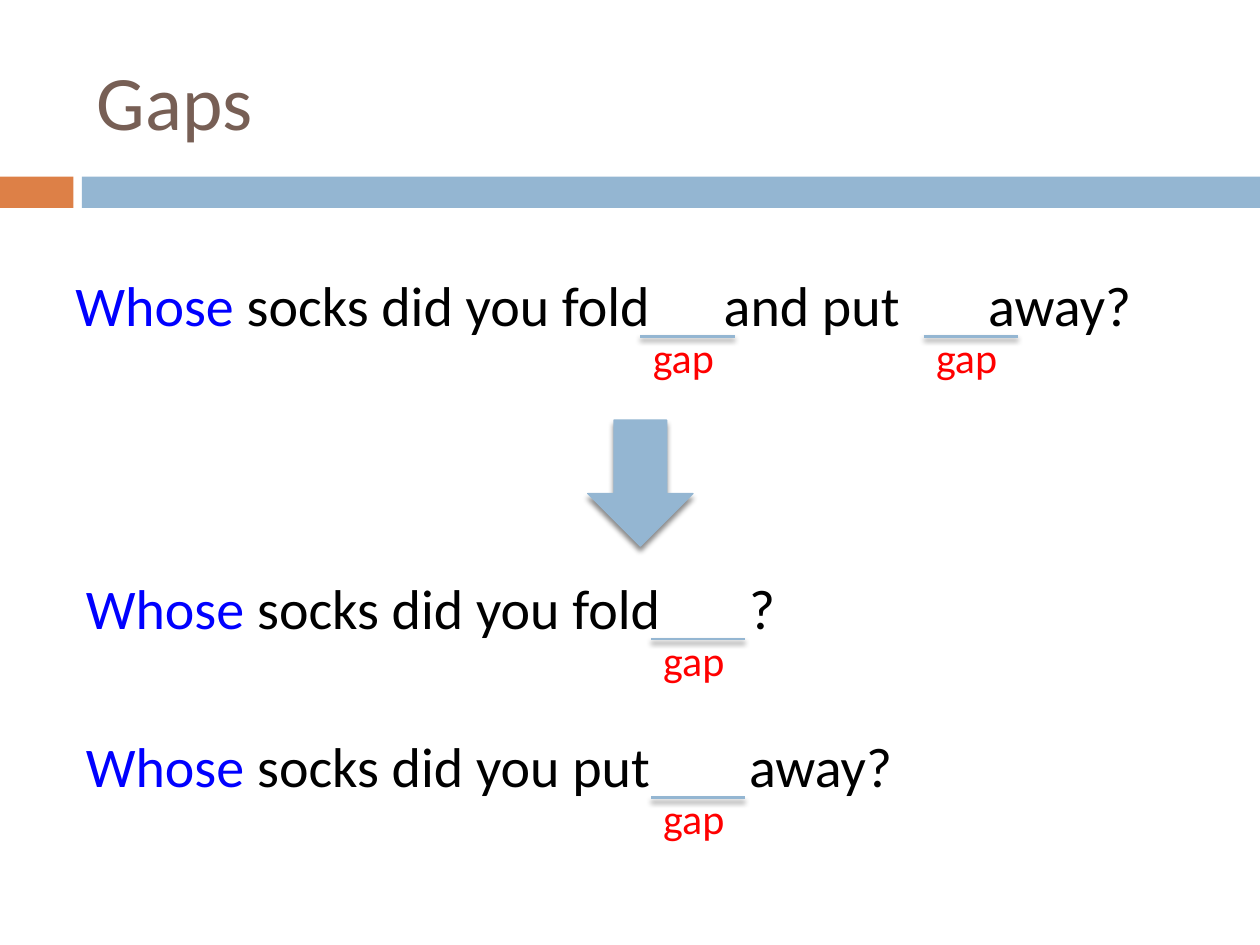
import pptx
import pptx.dml.color
import pptx.enum.shapes
import pptx.enum.text
import pptx.oxml
import pptx.oxml.ns
import pptx.util

Cm = pptx.util.Cm
RGBColor = pptx.dml.color.RGBColor
SHAPES = pptx.enum.shapes.MSO_SHAPE

ORANGE = RGBColor(0xDD, 0x80, 0x47)
SKY = RGBColor(0x94, 0xB6, 0xD2)
BROWN = RGBColor(0x77, 0x5F, 0x55)
BLUE = RGBColor(0x00, 0x00, 0xFF)
RED = RGBColor(0xFF, 0x00, 0x00)
BLACK = RGBColor(0x00, 0x00, 0x00)

FIRST_GAP = 11.64  # distance from a sentence's left edge to its first gap
GAP_WIDTH = 1.9


def add_soft_shadow(item):
    """Give a shape or connector a soft shadow that falls straight down."""
    effects = pptx.oxml.parse_xml(
        f'<a:effectLst {pptx.oxml.ns.nsdecls("a")}>'
        '<a:outerShdw blurRad="38100" dist="30000" dir="5400000" rotWithShape="0">'
        '<a:srgbClr val="000000"><a:alpha val="45000"/></a:srgbClr>'
        '</a:outerShdw></a:effectLst>')
    item._element.spPr.append(effects)


def add_text(page, left, top, width, height, spans, size):
    """Write one paragraph made of (text, colour) spans."""
    box = page.shapes.add_textbox(Cm(left), Cm(top), Cm(width), Cm(height))
    box.text_frame.word_wrap = True
    para = box.text_frame.paragraphs[0]
    for text, colour in spans:
        span = para.add_run()
        span.text = text
        span.font.name = "Calibri"
        span.font.size = pptx.util.Pt(size)
        span.font.color.rgb = colour
    return box


def add_tab_stops(para, stops):
    tabs = "".join(f'<a:tab pos="{Cm(stop)}" algn="l"/>' for stop in stops)
    para._p.get_or_add_pPr().append(pptx.oxml.parse_xml(
        f'<a:tabLst {pptx.oxml.ns.nsdecls("a")}>{tabs}</a:tabLst>'))


def add_block(page, kind, left, top, width, height, colour):
    block = page.shapes.add_shape(kind, Cm(left), Cm(top), Cm(width), Cm(height))
    block.fill.solid()
    block.fill.fore_color.rgb = colour
    block.line.fill.background()
    return block


def add_header(page, left, top, width):
    """Title above a two-coloured band."""
    for offset, band_width, colour in ((0, 1.48, ORANGE), (1.65, width - 1.65, SKY)):
        band = add_block(page, SHAPES.RECTANGLE, left + offset, top + 3.56,
                         band_width, 0.63, colour)
        band.shadow.inherit = False
    title = add_text(page, left + 1.7, top + 0.64, 22.65, 2.74, [("Gaps", BROWN)], 44)
    title.text_frame.vertical_anchor = pptx.enum.text.MSO_ANCHOR.MIDDLE


def add_gap(page, left, top):
    """Underline with its label below."""
    rule = page.shapes.add_connector(
        pptx.enum.shapes.MSO_CONNECTOR.STRAIGHT,
        Cm(left), Cm(top), Cm(left + GAP_WIDTH), Cm(top))
    rule.line.color.rgb = SKY
    rule.line.width = pptx.util.Pt(1.5)
    add_soft_shadow(rule)
    add_text(page, left, top - 0.22, 4.45, 1.27, [("gap", RED)], 24)


def add_sentence(page, left, top, width, rest, gaps, stops):
    """Question whose tabs leave room for the gaps."""
    box = add_text(page, left, top, width, 1.63,
                   [("Whose", BLUE), (rest, BLACK)], 32)
    add_tab_stops(box.text_frame.paragraphs[0], stops)
    for gap in gaps:
        add_gap(page, left + gap, top + 1.45)


def add_arrow(page, left, top, width, height):
    arrow = add_block(page, SHAPES.DOWN_ARROW, left, top, width, height, SKY)
    arrow.line.color.rgb = SKY
    arrow.line.width = pptx.util.Pt(0.79)
    add_soft_shadow(arrow)


def main():
    deck = pptx.Presentation()
    deck.slide_width, deck.slide_height = Cm(25.4), Cm(19.05)
    page = deck.slides.add_slide(deck.slide_layouts[6])

    add_header(page, 0, 0, 25.4)

    # Full question, then the two questions it is made of
    add_sentence(page, 1.27, 5.33, 23.1, " socks did you fold\tand put\taway?",
                 (FIRST_GAP, 17.35), (13.07, 18.4))
    add_arrow(page, 11.85, 8.47, 2.12, 2.54)
    for top, width, rest in ((11.43, 15.04, " socks did you fold\t?"),
                             (14.63, 20.32, " socks did you put\taway?")):
        add_sentence(page, 1.48, top, width, rest, (FIRST_GAP,), (13.37,))

    deck.save("out.pptx")


if __name__ == "__main__":
    main()
